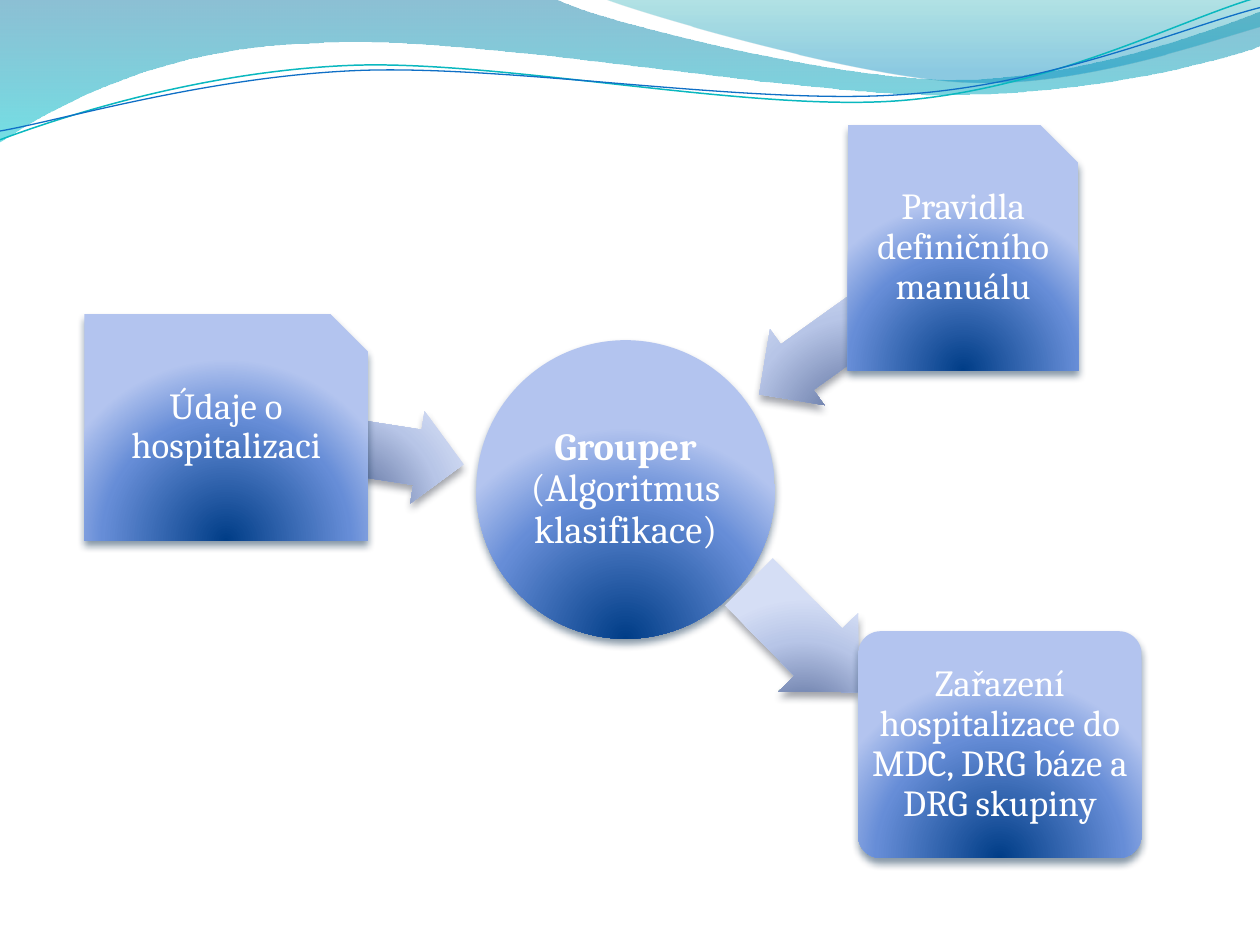
from math import cos, radians, sin

from pptx import Presentation
from pptx.dml.color import RGBColor
from pptx.enum.shapes import MSO_SHAPE
from pptx.enum.text import MSO_ANCHOR, PP_ALIGN
from pptx.oxml import parse_xml
from pptx.oxml.ns import nsdecls, qn
from pptx.util import Inches, Pt

WHITE = RGBColor(0xFF, 0xFF, 0xFF)
TEAL = RGBColor(0x0A, 0xB8, 0xBF)
BLUE = RGBColor(0x0F, 0x6F, 0xC6)
NODE_SHADOW = RGBColor(0x04, 0x27, 0x47)
ARROW_SHADOW = RGBColor(0x3C, 0x41, 0x4F)
NODE_STOPS = [
    (0, RGBColor(0x00, 0x3D, 0x87), 100),
    (68, RGBColor(0x66, 0x8D, 0xD7), 100),
    (100, RGBColor(0xB3, 0xC4, 0xEF), 100),
]
ARROW_STOPS = [
    (0, RGBColor(0x4A, 0x5F, 0x8F), 100),
    (68, RGBColor(0xB7, 0xC5, 0xE7), 100),
    (100, RGBColor(0xD5, 0xDE, 0xF5), 100),
]
BAND_STOPS = [(0, RGBColor(0x00, 0x74, 0xA1), 45), (100, RGBColor(0x00, 0xC6, 0xCF), 55)]
CORNER_STOPS = [(0, RGBColor(0x00, 0xA1, 0xA9), 30), (80, RGBColor(0x00, 0x8B, 0xBF), 45)]

LINEAR = '<a:lin ang="5400000" scaled="1"/>'
RADIAL = ('<a:path path="circle"><a:fillToRect l="50000" t="130000" '
          'r="50000" b="-30000"/></a:path>')

WAVE_ROTATION = 357.3
BANDS = [
    (BAND_STOPS, (-0.01, -0.01, 10.02, 1.14), [
        [(0, 0)], [(4.4, -0.01)],
        [(4.76, 0.17), (6.64, 0.63), (7.58, 0.63)],
        [(8.53, 0.63), (9.58, 0.26), (10, 0.09)],
        [(10.01, 0.36)],
        [(9.83, 0.44), (8.7, 0.76), (7.46, 0.75)],
        [(6.22, 0.75), (3.82, 0.28), (2.57, 0.34)],
        [(1.29, 0.36), (0.46, 0.83), (-0.01, 1.13)],
        [(0, 0)]]),
    (CORNER_STOPS, (4.79, -0.01, 5.21, 0.7), [
        [(4.79, -0.01)],
        [(5.09, 0.11), (6.82, 0.62), (7.69, 0.65)],
        [(8.56, 0.69), (9.61, 0.32), (10, 0.21)],
        [(10, 0)], [(4.79, -0.01)]]),
]
WAVES = [
    (TEAL, 0.85, (-0.02, 0.22, 10.02, 0.71), [
        [(0, 1.11)],
        [(0.48, 0.93), (1.58, 0.57), (2.77, 0.52)],
        [(3.95, 0.47), (5.93, 0.89), (7.13, 0.8)],
        [(8.33, 0.71), (9.38, 0.15), (9.98, -0.02)]]),
    (BLUE, 0.75, (-0.02, 0.3, 10.03, 0.58), [
        [(0, 1.04)],
        [(0.47, 0.96), (1.64, 0.61), (2.83, 0.56)],
        [(4.03, 0.51), (5.97, 0.84), (7.17, 0.75)],
        [(8.36, 0.67), (9.41, 0.21), (10, 0.06)]]),
]
GROUPER = (MSO_SHAPE.OVAL, (3.78, 2.7, 2.37, 2.37), 22, 0.02,
           [("Grouper ", True), ("(Algoritmus klasifikace)", False)])
BRANCHES = [
    ((1.78, 3.17, 1.91, 0.74), 188.8, MSO_SHAPE.SNIP_1_RECTANGLE,
     (0.67, 2.49, 2.25, 1.8), "Údaje o hospitalizaci"),
    ((5.84, 2.18, 1.99, 0.74), 324.4, MSO_SHAPE.SNIP_1_RECTANGLE,
     (6.73, 0.99, 1.83, 1.95), "Pravidla definičního manuálu"),
    ((5.76, 4.61, 1.23, 0.89), 225.4, MSO_SHAPE.ROUNDED_RECTANGLE,
     (6.81, 5.01, 2.25, 1.8), "Zařazení hospitalizace do MDC, DRG báze a DRG skupiny"),
]


def set_gradient(sp, stops, direction):
    gs = "".join(
        f'<a:gs pos="{pos * 1000}"><a:srgbClr val="{color}">'
        f'<a:alpha val="{alpha * 1000}"/></a:srgbClr></a:gs>'
        for pos, color, alpha in stops)
    sp.line.fill.background()
    sp._element.spPr.insert(2, parse_xml(
        f'<a:gradFill {nsdecls("a")} rotWithShape="0">'
        f'<a:gsLst>{gs}</a:gsLst>{direction}</a:gradFill>'))


def set_shadow(sp, color):
    sp._element.spPr.append(parse_xml(
        f'<a:effectLst {nsdecls("a")}><a:outerShdw blurRad="{Pt(4.5)}" dist="{Pt(3)}" '
        f'dir="5400000" rotWithShape="0"><a:srgbClr val="{color}">'
        f'<a:alpha val="48000"/></a:srgbClr></a:outerShdw></a:effectLst>'))


def add_curve(s, box, segments, rotation=0, close=False):
    left, top, width, height = box
    angle = radians(-rotation)

    def locate(x, y):
        dx, dy = x - left - width / 2, y - top - height / 2
        return (Inches(width / 2 + dx * cos(angle) - dy * sin(angle)),
                Inches(height / 2 + dx * sin(angle) + dy * cos(angle)))

    located = [[locate(*point) for point in seg] for seg in segments]
    builder = s.shapes.build_freeform(*located[0][0])
    builder.add_line_segments([seg[-1] for seg in located[1:]], close=close)
    sp = builder.convert_to_shape()
    sp.left, sp.top, sp.width, sp.height = map(Inches, box)
    sp.rotation = rotation
    sp.shadow.inherit = False

    outline = sp._element.spPr.find(".//" + qn("a:path"))
    outline.set("w", str(sp.width))
    outline.set("h", str(sp.height))
    for command, seg in zip(list(outline), located):
        tag = "cubicBezTo" if len(seg) == 3 else command.tag.split("}")[1]
        pts = "".join(f'<a:pt x="{x}" y="{y}"/>' for x, y in seg)
        outline.replace(command, parse_xml(f'<a:{tag} {nsdecls("a")}>{pts}</a:{tag}>'))
    return sp


def add_glossy(s, kind, box, stops, shadow):
    sp = s.shapes.add_shape(kind, *map(Inches, box))
    set_gradient(sp, stops, RADIAL)
    set_shadow(sp, shadow)
    return sp


def add_node(s, kind, box, size, inset, runs):
    sp = add_glossy(s, kind, box, NODE_STOPS, NODE_SHADOW)
    tf = sp.text_frame
    tf.word_wrap = True
    tf.vertical_anchor = MSO_ANCHOR.MIDDLE
    tf.margin_left = tf.margin_right = tf.margin_top = tf.margin_bottom = Inches(inset)
    if kind == MSO_SHAPE.SNIP_1_RECTANGLE:
        tf.margin_left = tf.margin_bottom = Inches(inset + min(box[2:]) / 12)
    elif kind == MSO_SHAPE.ROUNDED_RECTANGLE:
        sp.adjustments[0] = 0.1
    p = tf.paragraphs[0]
    p.alignment = PP_ALIGN.CENTER
    p.line_spacing = 0.9
    p.font.name = "Cambria"
    p.font.size = Pt(size)
    p.font.color.rgb = WHITE
    for text, bold in runs:
        r = p.add_run()
        r.text = text
        r.font.bold = bold


def add_arrow(s, box, rotation):
    sp = add_glossy(s, MSO_SHAPE.LEFT_ARROW, box, ARROW_STOPS, ARROW_SHADOW)
    sp.rotation = rotation
    sp.adjustments[0] = 0.6
    sp.adjustments[1] = 0.5


def main():
    prs = Presentation()
    prs.slide_width, prs.slide_height = Inches(10), Inches(7.5)
    s = prs.slides.add_slide(prs.slide_layouts[6])
    for stops, box, segments in BANDS:
        set_gradient(add_curve(s, box, segments, close=True), stops, LINEAR)
    for color, width, box, segments in WAVES:
        sp = add_curve(s, box, segments, WAVE_ROTATION)
        sp.fill.background()
        sp.line.color.rgb = color
        sp.line.width = Pt(width)
    add_node(s, *GROUPER)
    for arrow, rotation, kind, box, text in BRANCHES:
        add_arrow(s, arrow, rotation)
        add_node(s, kind, box, 21, 0.04, [(text, False)])
    prs.save("out.pptx")


if __name__ == "__main__":
    main()
